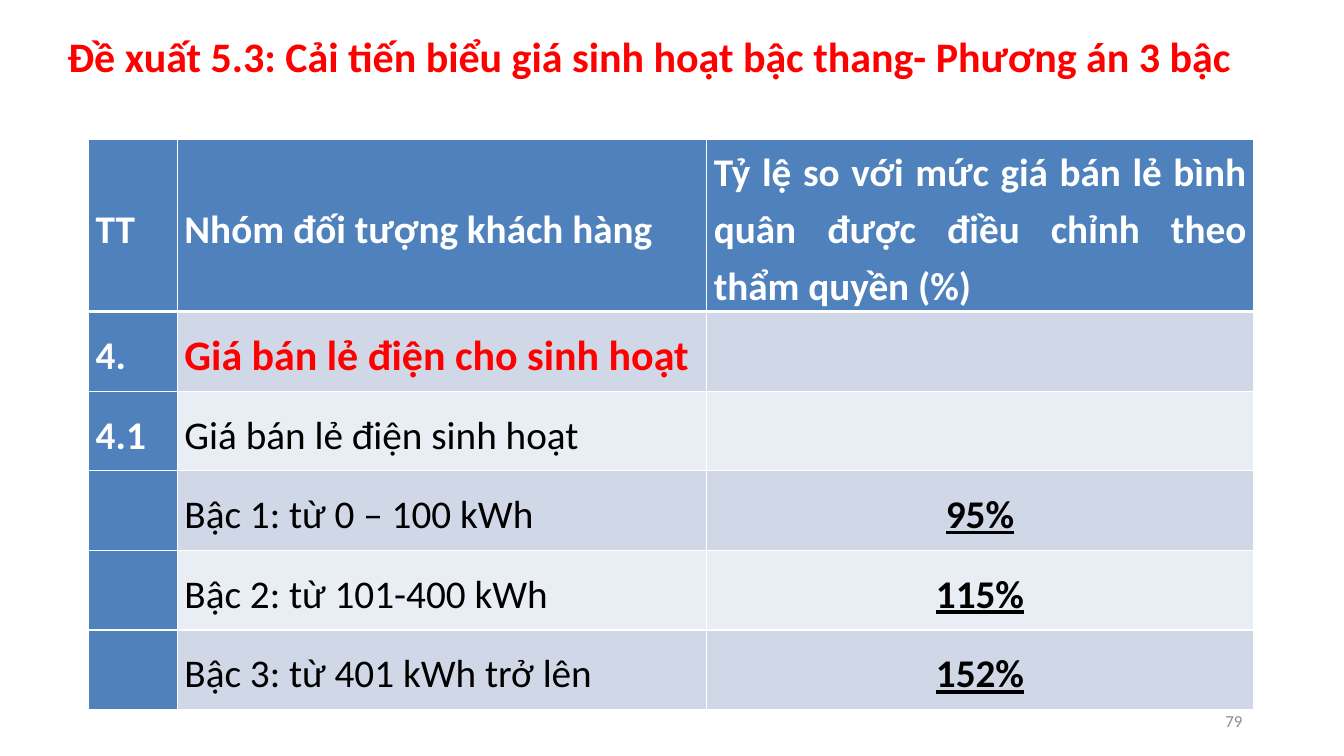
from dataclasses import dataclass

from lxml import etree
from pptx import Presentation
from pptx.dml.color import RGBColor
from pptx.enum.text import MSO_ANCHOR, PP_ALIGN
from pptx.oxml.ns import qn
from pptx.util import Inches, Pt

RED = RGBColor(0xFF, 0x00, 0x00)
WHITE = RGBColor(0xFF, 0xFF, 0xFF)
BLACK = RGBColor(0x00, 0x00, 0x00)
GREY = RGBColor(0x8C, 0x8C, 0x8C)
BLUE = RGBColor(0x4F, 0x81, 0xBD)
BANDS = (RGBColor(0xD0, 0xD8, 0xE8), RGBColor(0xE9, 0xED, 0xF4))

MIDDLE = MSO_ANCHOR.MIDDLE
JUSTIFY, CENTER, RIGHT = PP_ALIGN.JUSTIFY, PP_ALIGN.CENTER, PP_ALIGN.RIGHT
FACE = "Calibri"


@dataclass(frozen=True)
class Style:
    size: float
    color: RGBColor
    bold: bool = False
    line: bool = False
    align: PP_ALIGN = JUSTIFY
    space: float = 1.2


@dataclass(frozen=True)
class Label:
    text: str
    box: tuple[float, float, float, float]
    style: Style


HEAD = Style(28, WHITE, bold=True)
GROUP = Style(30, RED, bold=True)
BODY = Style(28, BLACK)
RATE = Style(28, BLACK, bold=True, line=True, align=CENTER)

LABELS = (
    Label("Đề xuất 5.3: Cải tiến biểu giá sinh hoạt bậc thang- Phương án 3 bậc",
          (0.57, 0.19, 12.51, 0.79), Style(30, RED, bold=True, space=0.9)),
    Label("79", (9.42, 6.95, 3, 0.4), Style(12, GREY, align=RIGHT, space=1)),
)

# Table: text of each row, and the style of its middle cell
ROWS = (
    ("TT", "Nhóm đối tượng khách hàng",
     "Tỷ lệ so với mức giá bán lẻ bình quân được điều chỉnh theo thẩm quyền (%)", HEAD),
    ("4.", "Giá bán lẻ điện cho sinh hoạt", "", GROUP),
    ("4.1", "Giá bán lẻ điện sinh hoạt", "", BODY),
    ("", "Bậc 1: từ 0 – 100 kWh", "95%", BODY),
    ("", "Bậc 2: từ 101-400 kWh", "115%", BODY),
    ("", "Bậc 3: từ 401 kWh trở lên", "152%", BODY),
)
WIDTHS = (0.88, 5.25, 5.42)
HEAD_H, ROW_H = 1.64, 0.79
LEFT, TOP = 0.88, 1.38


def write(frame, text: str, style: Style) -> None:
    para = frame.paragraphs[0]
    para.alignment = style.align
    para.line_spacing = style.space
    run = para.add_run()
    run.text = text
    look = {"name": FACE, "size": Pt(style.size), "bold": style.bold,
            "underline": style.line}
    for key, value in look.items():
        setattr(run.font, key, value)
    run.font.color.rgb = style.color


def add_label(slide, label: Label) -> None:
    frame = slide.shapes.add_textbox(*map(Inches, label.box)).text_frame
    frame.word_wrap = True
    frame.vertical_anchor = MIDDLE
    write(frame, label.text, label.style)


def add_edges(cell, top: float, bottom: float) -> None:
    props = cell._tc.get_or_add_tcPr()
    edges = {"lnL": 1, "lnR": 1, "lnT": top, "lnB": bottom}
    for spot, (tag, width) in enumerate(edges.items()):
        edge = etree.Element(qn(f"a:{tag}"), w=str(Pt(width)))
        fill = etree.SubElement(edge, qn("a:solidFill"))
        etree.SubElement(fill, qn("a:srgbClr"), val=str(WHITE))
        props.insert(spot, edge)


def fill_cell(cell, text: str, style: Style, fill: RGBColor) -> None:
    side = Inches(0.07)
    look = {"margin_left": side, "margin_right": side, "margin_top": 0,
            "margin_bottom": 0, "vertical_anchor": MIDDLE}
    for key, value in look.items():
        setattr(cell, key, value)
    cell.fill.solid()
    cell.fill.fore_color.rgb = fill
    if text:
        write(cell.text_frame, text, style)


def add_rates(slide) -> None:
    height = HEAD_H + ROW_H * (len(ROWS) - 1)
    box = map(Inches, (LEFT, TOP, sum(WIDTHS), height))
    table = slide.shapes.add_table(len(ROWS), len(WIDTHS), *box).table
    for col, width in zip(table.columns, WIDTHS):
        col.width = Inches(width)
    for r, (*texts, style) in enumerate(ROWS):
        table.rows[r].height = Inches(ROW_H if r else HEAD_H)
        styles = (HEAD, style, RATE if r else HEAD)
        for c, text in enumerate(texts):
            cell = table.cell(r, c)
            fill = BANDS[(r - 1) % 2] if r and c else BLUE
            fill_cell(cell, text, styles[c], fill)
            add_edges(cell, 3 if r == 1 else 1, 3 if r == 0 else 1)


def main() -> None:
    deck = Presentation()
    deck.slide_width, deck.slide_height = Inches(13.33), Inches(7.5)
    slide = deck.slides.add_slide(deck.slide_layouts[6])
    add_rates(slide)
    # Title and slide number
    for label in LABELS:
        add_label(slide, label)
    deck.save("out.pptx")


if __name__ == "__main__":
    main()
